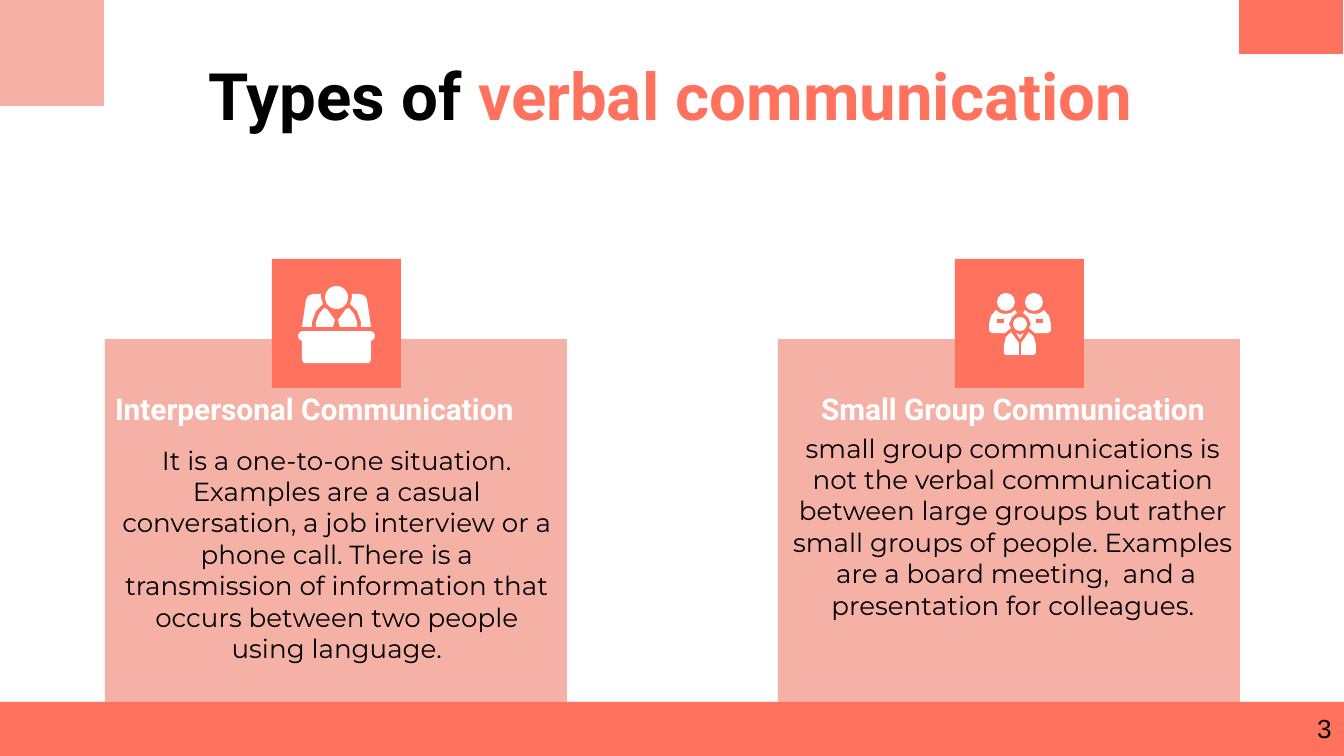
from pptx import Presentation
from pptx.dml.color import RGBColor
from pptx.enum.shapes import MSO_SHAPE
from pptx.enum.text import MSO_ANCHOR, MSO_AUTO_SIZE, PP_ALIGN
from pptx.oxml.ns import qn
from pptx.util import Pt
from lxml.etree import SubElement

PX = 914400 / 134.4
COLORS = {"coral": "FF725E", "pink": "F6B1A7", "white": "FFFFFF", "black": "000000"}
INSET = 13

CARDS = [
    {"x": 105, "badge": 272, "head": (102, 383, 460, 52), "body": (109, 431, 456, 247),
     "title": "Interpersonal Communication",
     "text": "It is a one-to-one situation. Examples are a casual conversation, a job interview "
             "or a phone call. There is a transmission of information that occurs between "
             "two people using language."},
    {"x": 778, "badge": 955, "head": (808, 383, 431, 52), "body": (780, 419, 466, 247),
     "title": "Small Group Communication",
     "text": "small group communications is not the verbal communication between large groups "
             "but rather small groups of people. Examples  are a board meeting,  and a "
             "presentation for colleagues."},
]

DESK = [(302, 331), (371, 331), (374, 333), (375, 336), (374, 339), (371, 341), (371, 360),
        (369, 363), (304, 363), (302, 360), (302, 341), (299, 339), (298, 336), (299, 333)]
CHAIR = [(313, 294), (321, 294), (321, 298), (323, 304), (316, 311), (312, 322),
         (312, 327), (302, 327), (306, 300), (308, 296)]
TORSO = [(324, 308), (327, 309), (335, 320), (333, 327), (316, 327), (316, 322), (319, 314)]
COLLAR = [(1016, 333), (1020, 335), (1024, 333), (1020, 339)]
LEG = [(1011, 332), (1019, 343), (1019, 355), (1006, 355), (1004, 353), (1004, 345), (1006, 337)]
ADULT = [(996, 310), (1000, 313), (1005, 314), (1011, 313), (1015, 310), (1017, 313),
         (1012, 317), (1009, 324), (1011, 328), (1005, 333), (992, 333), (989, 331),
         (989, 324), (991, 316)]


def emu(*lengths):
    return [round(n * PX) for n in lengths]


def paint(sp, color):
    sp.shadow.inherit = False
    sp.fill.solid()
    sp.fill.fore_color.rgb = RGBColor.from_string(COLORS[color])
    sp.line.fill.background()


def add_block(shapes, kind, box, color):
    sp = shapes.add_shape(kind, *emu(*box))
    paint(sp, color)


def add_outline(shapes, points):
    builder = shapes.build_freeform(*points[0], scale=PX)
    builder.add_line_segments(points[1:], close=True)
    paint(builder.convert_to_shape(), "white")


def add_mirrored(shapes, points, axis_sum):
    add_outline(shapes, points)
    add_outline(shapes, [(axis_sum - x, y) for x, y in points])


def format_run(r, font, size, color, bold=False):
    r.font.name = font
    r.font.size = Pt(size)
    r.font.bold = bold
    r.font.color.rgb = RGBColor.from_string(COLORS[color])


def fill_placeholder(s, idx, box, parts, font, size, bold, align, anchor):
    sp = s.placeholders[idx]
    s.shapes._spTree.append(sp._element)
    sp.left, sp.top, sp.width, sp.height = emu(*box)
    tf = sp.text_frame
    tf.word_wrap = True
    tf.auto_size = MSO_AUTO_SIZE.NONE
    tf.vertical_anchor = anchor
    tf.margin_left, tf.margin_top, tf.margin_right, tf.margin_bottom = emu(*[INSET] * 4)
    p = tf.paragraphs[0]
    pPr = p._p.get_or_add_pPr()
    pPr.set("marL", "0")
    pPr.set("indent", "0")
    SubElement(pPr, qn("a:buNone"))
    p.alignment = align
    p.space_before = Pt(0)
    for text, color in parts:
        r = p.add_run()
        r.text = text
        format_run(r, font, size, color, bold)


def add_desk_icon(shapes):
    add_block(shapes, MSO_SHAPE.OVAL, (325, 286, 23, 23), "white")
    add_outline(shapes, DESK)
    for points in (CHAIR, TORSO):
        add_mirrored(shapes, points, 673)


def add_group_icon(shapes):
    add_block(shapes, MSO_SHAPE.OVAL, (1013, 317, 14, 14), "white")
    add_outline(shapes, COLLAR)
    for points in (ADULT, LEG):
        add_mirrored(shapes, points, 2040)
    for x in (997, 1025):
        add_block(shapes, MSO_SHAPE.OVAL, (x, 293, 18, 18), "white")
    for x in (997, 1036):
        add_block(shapes, MSO_SHAPE.ROUNDED_RECTANGLE, (x, 319, 7, 4), "coral")


def add_page_number(s, number):
    tf = s.shapes.add_textbox(*emu(1304, 706, 43, 46)).text_frame
    tf.word_wrap = True
    tf.text = number
    format_run(tf.paragraphs[0].runs[0], "Arial", 14, "black")


def main():
    prs = Presentation()
    prs.slide_width, prs.slide_height = emu(1344, 756)
    s = prs.slides.add_slide(prs.slide_layouts.get_by_name("Comparison"))

    for card in CARDS:
        add_block(s.shapes, MSO_SHAPE.RECTANGLE, (card["x"], 339, 462, 417), "pink")
    for box, color in [((0, 702, 1344, 54), "coral"), ((1239, 0, 104, 54), "coral"),
                       ((0, 0, 104, 106), "pink")]:
        add_block(s.shapes, MSO_SHAPE.RECTANGLE, box, color)

    fill_placeholder(s, 0, (87, 44, 1168, 101),
                     [("Types of ", "black"), ("verbal communication", "coral")],
                     "Roboto", 35, True, PP_ALIGN.CENTER, MSO_ANCHOR.MIDDLE)
    for i, (card, add_icon) in enumerate(zip(CARDS, (add_desk_icon, add_group_icon))):
        fill_placeholder(s, 1 + 2 * i, card["head"], [(card["title"], "white")],
                         "Roboto", 16, True, PP_ALIGN.LEFT, MSO_ANCHOR.MIDDLE)
        fill_placeholder(s, 2 + 2 * i, card["body"], [(card["text"], "black")],
                         "Montserrat", 14, False, PP_ALIGN.CENTER, MSO_ANCHOR.TOP)
        shapes = s.shapes.add_group_shape().shapes
        add_block(shapes, MSO_SHAPE.RECTANGLE, (card["badge"], 259, 129, 129), "coral")
        add_icon(shapes)

    add_page_number(s, "3")
    prs.save("out.pptx")


if __name__ == "__main__":
    main()
